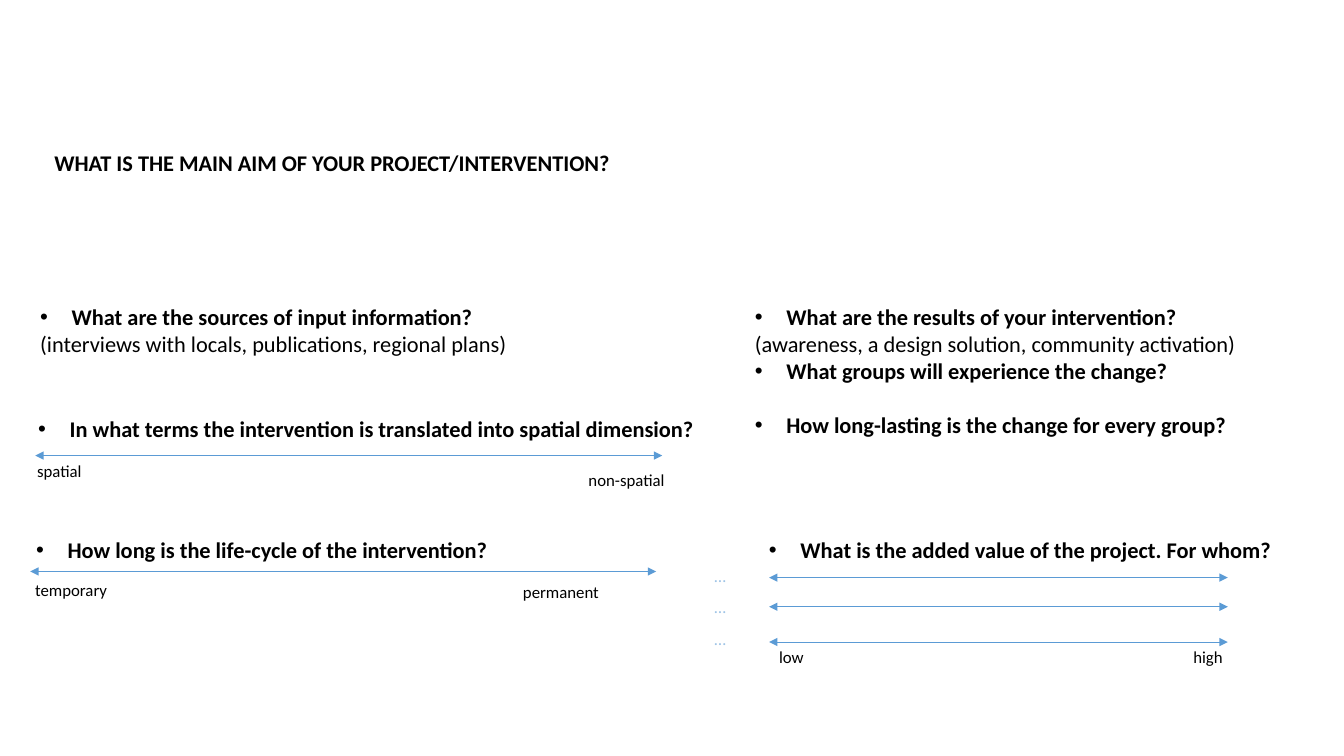
import pptx
import pptx.util
import pptx.dml.color
import pptx.enum.shapes
import pptx.enum.text
from lxml import etree
from pptx.oxml.ns import qn

Pt = pptx.util.Pt
COLORS = {"text": "000000", "arrow": "5B9BD5", "dots": "9DC3E6"}
FONT = "Calibri"
QUESTION_HEIGHT = 26.6
LABEL_HEIGHT = 21.8
BULLET_INDENT = 22.5


def add_bullet(paragraph):
    properties = paragraph._p.get_or_add_pPr()
    properties.set("marL", str(Pt(BULLET_INDENT)))
    properties.set("indent", str(-Pt(BULLET_INDENT)))
    etree.SubElement(properties, qn("a:buFont")).set("typeface", "Arial")
    etree.SubElement(properties, qn("a:buChar")).set("char", "•")


def format_paragraph(paragraph, text, size=16, bold=False, color="text",
                     bullet=False, space_before=0):
    if space_before:
        paragraph.space_before = Pt(space_before)
    if bullet:
        add_bullet(paragraph)
    run = paragraph.add_run()
    run.text = text
    run.font.name = FONT
    run.font.size = Pt(size)
    run.font.bold = bold
    run.font.color.rgb = pptx.dml.color.RGBColor.from_string(COLORS[color])


def add_text(slide, box, *paragraphs):
    """Place one text box; each paragraph is a text and a dict of its format."""
    shape = slide.shapes.add_textbox(*map(Pt, box))
    frame = shape.text_frame
    frame.word_wrap = False
    frame.auto_size = pptx.enum.text.MSO_AUTO_SIZE.SHAPE_TO_FIT_TEXT
    for index, (text, text_format) in enumerate(paragraphs):
        paragraph = frame.add_paragraph() if index else frame.paragraphs[0]
        format_paragraph(paragraph, text, **text_format)


def question(text, **text_format):
    return text, {"bold": True, "bullet": True, **text_format}


def add_label(slide, left, top, width, text, color="text"):
    add_text(slide, (left, top, width, LABEL_HEIGHT),
             (text, {"size": 12, "color": color}))


def add_double_arrow(slide, left, top, width):
    arrow = slide.shapes.add_connector(
        pptx.enum.shapes.MSO_CONNECTOR.STRAIGHT,
        Pt(left), Pt(top), Pt(left + width), Pt(top))
    arrow.line.color.rgb = pptx.dml.color.RGBColor.from_string(COLORS["arrow"])
    arrow.line.width = Pt(0.5)
    line = arrow.line._get_or_add_ln()
    for end in ("a:headEnd", "a:tailEnd"):
        etree.SubElement(line, qn(end)).set("type", "triangle")
    etree.SubElement(arrow._element.spPr, qn("a:effectLst"))


def add_scale_question(slide, box, text, arrows, labels):
    """Place a question with its arrows and end labels, offset from the box."""
    left, top, width = box
    add_text(slide, (left, top, width, QUESTION_HEIGHT), question(text))
    for x, y, length in arrows:
        add_double_arrow(slide, left + x, top + y, length)
    for x, y, label_width, label in labels:
        add_label(slide, left + x, top + y, label_width, label)


def add_aim(slide, box):
    add_text(slide, box, ("WHAT IS THE MAIN AIM OF YOUR PROJECT/INTERVENTION?",
                          {"bold": True}))


def add_sources(slide, box):
    add_text(slide, box,
             question("What are the sources of input information?"),
             ("(interviews with locals, publications, regional plans)", {}))


def add_results(slide, box):
    add_text(slide, box,
             question("What are the results of your intervention?"),
             ("(awareness, a design solution, community activation)", {}),
             question("What groups will experience the change?"),
             question("How long-lasting is the change for every group?",
                      space_before=19.3))


def add_added_value(slide, box):
    left, top, _ = box
    add_scale_question(
        slide, box, "What is the added value of the project. For whom?",
        [(7.2, y, 327.6) for y in (33.2, 54, 79.2)],
        [(7.2, 79.2, 32.4, "low"), (303.1, 79.2, 35.3, "high")])
    for row in range(3):
        add_label(slide, left - 38.9, top + 20.9 + 22.7 * row, 23.8, "…", "dots")


def main():
    presentation = pptx.Presentation()
    presentation.slide_width = Pt(960)
    presentation.slide_height = Pt(540)
    slide = presentation.slides.add_slide(presentation.slide_layouts[6])

    add_aim(slide, (31.7, 103, 416.2, 46.1))
    add_sources(slide, (21.6, 213.1, 351.4, 65.5))
    add_scale_question(
        slide, (20.2, 293, 488.2),
        "In what terms the intervention is translated into spatial dimension?",
        [(5, 32.4, 447.8)],
        [(-0.8, 32.4, 46.8, "spatial"), (393.1, 38.9, 69.1, "non-spatial")])
    add_scale_question(
        slide, (18.7, 379.4, 348.5),
        "How long is the life-cycle of the intervention?",
        [(2.9, 28.8, 447.1)],
        [(-0.7, 31, 66.2, "temporary"), (347.8, 32.4, 69.1, "permanent")])
    add_results(slide, (532.1, 213.1, 362.2, 123.8))
    add_added_value(slide, (542.2, 379.4, 381.6))

    presentation.save("out.pptx")


if __name__ == "__main__":
    main()
